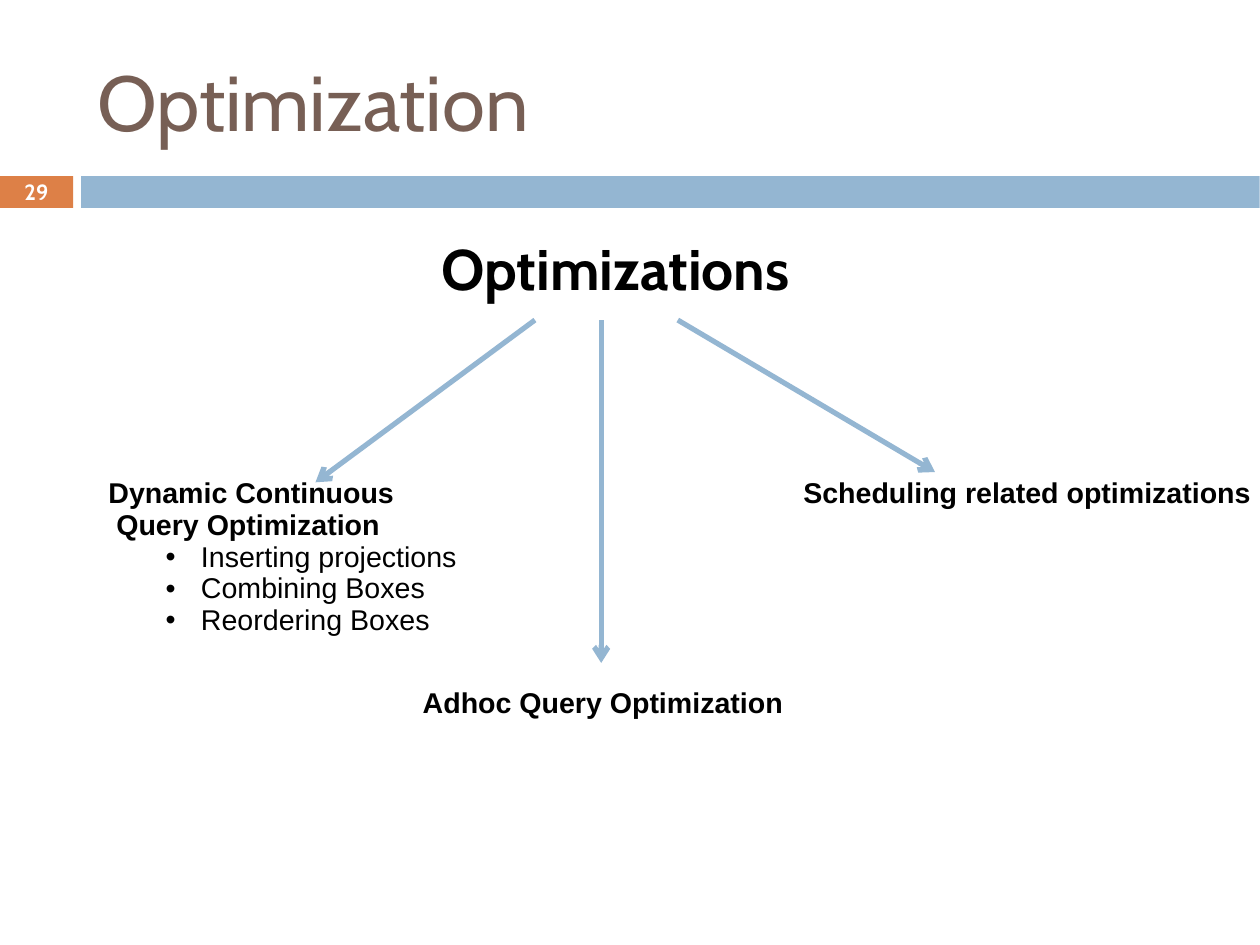
from dataclasses import dataclass

from lxml import etree
from pptx import Presentation
from pptx.dml.color import RGBColor
from pptx.enum.shapes import MSO_CONNECTOR, MSO_SHAPE
from pptx.enum.text import MSO_ANCHOR, MSO_AUTO_SIZE, PP_ALIGN
from pptx.oxml.ns import qn
from pptx.slide import Slide
from pptx.text.text import TextFrame
from pptx.util import Inches, Pt

LEFT, CENTER = PP_ALIGN.LEFT, PP_ALIGN.CENTER
TOP, MIDDLE = MSO_ANCHOR.TOP, MSO_ANCHOR.MIDDLE
FIT_TEXT, FIXED = MSO_AUTO_SIZE.SHAPE_TO_FIT_TEXT, MSO_AUTO_SIZE.NONE
RECTANGLE = MSO_SHAPE.RECTANGLE
STRAIGHT = MSO_CONNECTOR.STRAIGHT

BLUE = RGBColor(0x94, 0xB6, 0xD2)
ORANGE = RGBColor(0xDD, 0x80, 0x47)
BROWN = RGBColor(0x77, 0x5F, 0x55)
BLACK = RGBColor(0, 0, 0)
WHITE = RGBColor(0xFF, 0xFF, 0xFF)

Box = tuple[float, float, float, float]
Point = tuple[float, float]

CM_PER_INCH = 2.54
ARROW_TOP = 2.8
BRANCH_TOP = 4.13
LINE_SPACING = 0.93
FRAME_INSETS = {"margin_left": Inches(0.11), "margin_right": Inches(0.11),
                "margin_top": Inches(0.06), "margin_bottom": Inches(0.06)}


@dataclass(frozen=True)
class Style:
    font: str
    size: float
    color: RGBColor
    bold: bool = False
    align: PP_ALIGN = LEFT
    spacing: float = 1.0


@dataclass(frozen=True)
class Label:
    box: Box
    lines: tuple[str, ...]
    style: Style
    bullets: tuple[str, ...] = ()
    wrap: bool = False


@dataclass(frozen=True)
class Arrow:
    start: Point
    end: Point


TITLE = Style("Cabin", 49, BROWN)
NUMBER = Style("Cabin", 13.9, WHITE, True, CENTER)
HEADING = Style("Cabin", 36, BLACK, True, CENTER, LINE_SPACING)
BRANCH = Style("Arial", 18, BLACK, True, spacing=LINE_SPACING)
ITEM = Style("Arial", 18, BLACK, spacing=LINE_SPACING)

BANDS: tuple[tuple[Box, RGBColor], ...] = (
    ((0, 1.54, 0.64, 0.28), ORANGE),
    ((0.71, 1.54, 10.31, 0.28), BLUE),
)
LABELS = (
    Label((3.51, 2.05, 3.75, 0.66), ("Optimizations",), HEADING, wrap=True),
    Label((0.85, BRANCH_TOP, 3.28, 1.51),
          ("Dynamic Continuous", " Query Optimization"), BRANCH,
          ("Inserting projections", "Combining Boxes", "Reordering Boxes")),
    Label((3.6, 5.97, 3.39, 0.38), ("Adhoc Query Optimization",), BRANCH),
    Label((6.93, BRANCH_TOP, 4.16, 0.38),
          ("Scheduling related optimizations",), BRANCH),
)
ARROWS = (
    Arrow((4.68, ARROW_TOP), (2.76, 4.22)),
    Arrow((5.26, ARROW_TOP), (5.26, 5.8)),
    Arrow((5.93, ARROW_TOP), (8.18, BRANCH_TOP)),
)


def apply(target: object, values: dict[str, object]) -> None:
    for name, value in values.items():
        setattr(target, name, value)


def inches(values: tuple[float, ...]) -> list[Inches]:
    return [Inches(value) for value in values]


def write_line(tf: TextFrame, text: str, style: Style,
               first: bool = True, bullet: bool = False) -> None:
    p = tf.paragraphs[0] if first else tf.add_paragraph()
    apply(p, {"alignment": style.align, "line_spacing": style.spacing})
    if bullet:
        p.level = 1
        props = p._p.get_or_add_pPr()
        props.set("marL", str(Inches(0.81)))
        props.set("indent", str(Inches(-0.31)))
        etree.SubElement(props, qn("a:buFont"), typeface="Arial")
        etree.SubElement(props, qn("a:buChar"), char="•")
    r = p.add_run()
    r.text = text
    apply(r.font, {"name": style.font, "size": Pt(style.size), "bold": style.bold})
    r.font.color.rgb = style.color


def set_title(slide: Slide, text: str) -> None:
    sp = slide.shapes.title
    box = inches((0.74, 0.28, 9.83, 1.19))
    apply(sp, dict(zip(("left", "top", "width", "height"), box)))
    tf = sp.text_frame
    apply(tf, {"word_wrap": True, "auto_size": FIXED,
               "vertical_anchor": MIDDLE, **FRAME_INSETS})
    write_line(tf, text, TITLE)


def add_band(slide: Slide, box: Box, color: RGBColor) -> None:
    sp = slide.shapes.add_shape(RECTANGLE, *inches(box))
    sp.shadow.inherit = False
    sp.fill.solid()
    sp.fill.fore_color.rgb = color
    sp.line.fill.background()


def add_slide_number(slide: Slide, text: str) -> None:
    tf = slide.shapes.add_textbox(*inches((0, 1.53, 0.64, 0.29))).text_frame
    apply(tf, {"word_wrap": True, "auto_size": FIXED,
               "vertical_anchor": MIDDLE, **FRAME_INSETS})
    write_line(tf, text, NUMBER)


def add_label(slide: Slide, label: Label) -> None:
    tf = slide.shapes.add_textbox(*inches(label.box)).text_frame
    apply(tf, {"word_wrap": label.wrap, "auto_size": FIT_TEXT,
               "vertical_anchor": TOP})
    for i, text in enumerate(label.lines):
        write_line(tf, text, label.style, first=i == 0)
    for text in label.bullets:
        write_line(tf, text, ITEM, first=False, bullet=True)


def add_arrow(slide: Slide, arrow: Arrow) -> None:
    line = slide.shapes.add_connector(STRAIGHT, *inches(arrow.start + arrow.end))
    line.line.color.rgb = BLUE
    line.line.width = Pt(3.25)
    etree.SubElement(line.line._get_or_add_ln(), qn("a:tailEnd"), type="arrow")
    etree.SubElement(line._element.spPr, qn("a:effectLst"))


def main() -> None:
    prs = Presentation()
    prs.slide_width = Inches(28 / CM_PER_INCH)
    prs.slide_height = Inches(21 / CM_PER_INCH)
    slide = prs.slides.add_slide(prs.slide_layouts.get_by_name("Title Only"))
    set_title(slide, "Optimization")
    for box, color in BANDS:
        add_band(slide, box, color)
    add_slide_number(slide, "29")
    for label in LABELS:
        add_label(slide, label)
    for arrow in ARROWS:
        add_arrow(slide, arrow)
    prs.save("out.pptx")


if __name__ == "__main__":
    main()
